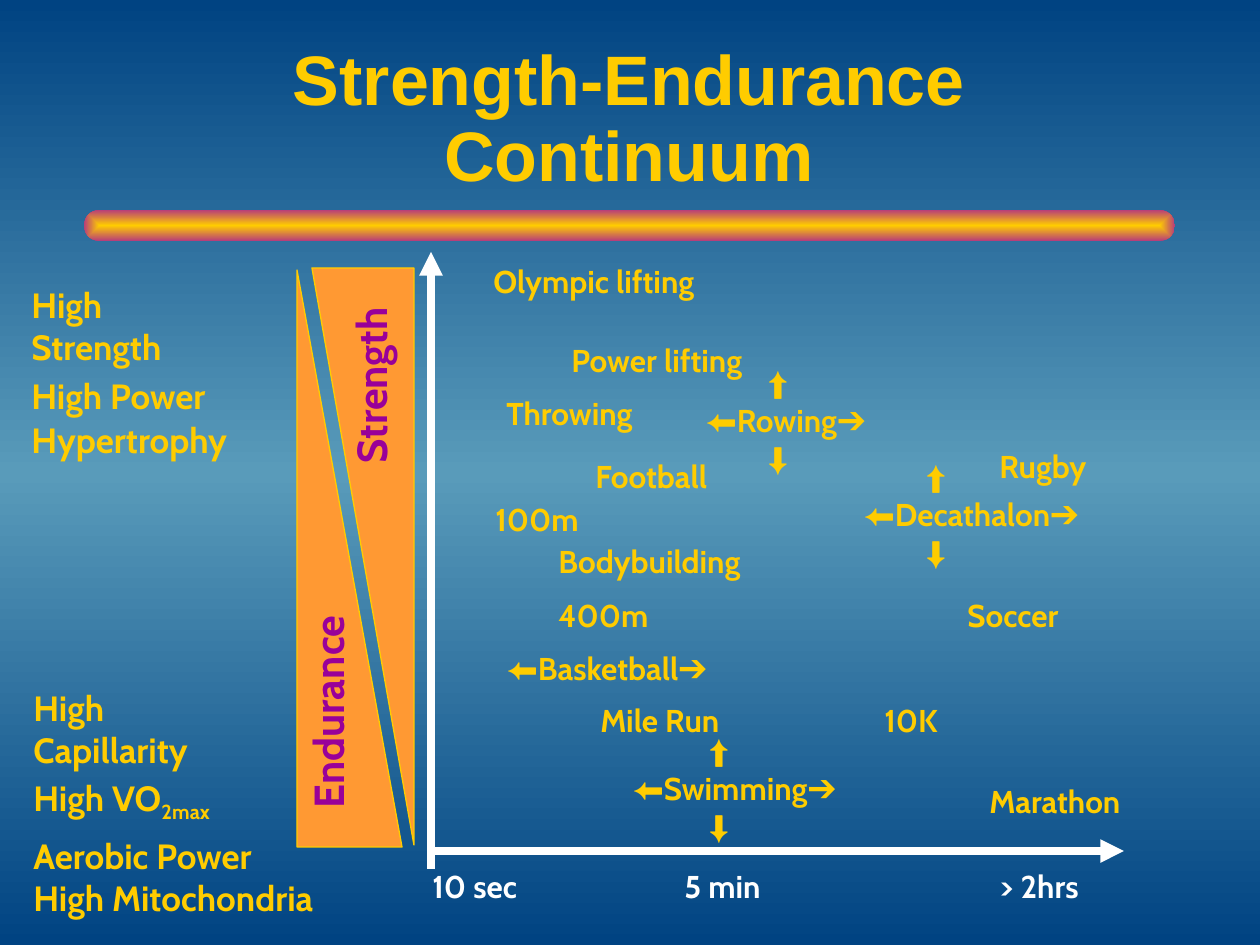
from dataclasses import dataclass

from lxml import etree
from pptx import Presentation
from pptx.dml.color import RGBColor
from pptx.enum.shapes import MSO_CONNECTOR, MSO_SHAPE
from pptx.enum.text import MSO_ANCHOR, MSO_AUTO_SIZE, PP_ALIGN
from pptx.oxml import parse_xml
from pptx.oxml.ns import nsdecls, qn
from pptx.util import Emu, Pt

STRAIGHT = MSO_CONNECTOR.STRAIGHT
ROUNDED, TRIANGLE = MSO_SHAPE.ROUNDED_RECTANGLE, MSO_SHAPE.RIGHT_TRIANGLE
MIDDLE, CENTER = MSO_ANCHOR.MIDDLE, PP_ALIGN.CENTER
FIT_SHAPE, NO_FIT = MSO_AUTO_SIZE.SHAPE_TO_FIT_TEXT, MSO_AUTO_SIZE.NONE


def px(n: int) -> Emu:
    return Emu(round(n * 914400 / 126))


@dataclass(frozen=True)
class Theme:
    gold: str = "FFCC00"
    orange: str = "FF9933"
    purple: str = "990099"
    white: str = "FFFFFF"
    rose: str = "B73D7A"
    navy: str = "004382"
    sky: str = "599BBA"
    title_font: str = "Arial"
    body_font: str = "Cabin"
    title: int = 40
    wedge: int = 24
    benefit: int = 20
    label: int = 18


T = Theme()


@dataclass(frozen=True)
class Label:
    x: int
    y: int
    w: int
    text: str
    h: int = 50
    size: int = T.label
    color: str = T.gold
    wrap: bool = False
    rotation: int = 0


@dataclass(frozen=True)
class RangeLabel:
    x: int
    y: int
    w: int
    name: str
    indent: int


@dataclass(frozen=True)
class Wedge:
    x: int
    y: int
    w: int
    h: int
    flipped: bool
    label: Label


WEDGES = [
    Wedge(297, 270, 105, 577, False,
          Label(204, 665, 248, "Endurance", 63, T.wedge, T.purple, rotation=270)),
    Wedge(312, 268, 102, 577, True,
          Label(266, 339, 210, "Strength", 63, T.wedge, T.purple, rotation=270)),
]
BENEFITS = [
    Label(x, y, w, text, h, T.benefit, wrap=True)
    for x, y, w, h, text in [
        (19, 277, 184, 140, "High\vStrength"),
        (19, 368, 265, 97, "High Power"),
        (19, 412, 273, 97, "Hypertrophy"),
        (21, 680, 221, 140, "High\vCapillarity"),
        (21, 770, 265, 97, "High VO"),
        (21, 828, 410, 140, "Aerobic Power\nHigh Mitochondria"),
    ]
]
SPORTS = [
    Label(481, 256, 256, "Olympic lifting"),
    Label(559, 335, 229, "Power lifting"),
    Label(494, 388, 175, "Throwing"),
    Label(583, 451, 154, "Football"),
    Label(483, 494, 116, "100m"),
    Label(546, 536, 233, "Bodybuilding"),
    Label(546, 590, 116, "400m"),
    Label(494, 643, 258, "⬅Basketball➔"),
    Label(588, 695, 164, "Mile Run"),
    Label(872, 695, 87, "10K"),
    Label(987, 441, 126, "Rugby"),
    Label(955, 590, 130, "Soccer"),
    Label(977, 776, 178, "Marathon"),
]
RANGES = [
    RangeLabel(693, 357, 213, "Rowing", 63),
    RangeLabel(851, 451, 272, "Decathalon", 63),
    RangeLabel(620, 725, 260, "Swimming", 77),
]
TIMES = [
    Label(x, 861, w, text, color=T.white)
    for x, w, text in [(420, 126, "10 sec"), (672, 115, "5 min"), (987, 130, "> 2hrs")]
]


def rgb(color: str) -> RGBColor:
    return RGBColor.from_string(color)


def set_gradient(fill, props, colors: list[str], direction: str) -> None:
    fill.gradient()
    stops = "".join(
        f'<a:gs pos="{i * 100000 // (len(colors) - 1)}"><a:srgbClr val="{c}"/></a:gs>'
        for i, c in enumerate(colors))
    grad = props.find(qn("a:gradFill"))
    props.replace(grad, parse_xml(
        f'<a:gradFill {nsdecls("a")} rotWithShape="1"><a:gsLst>{stops}</a:gsLst>'
        f'{direction}</a:gradFill>'))


def add_bar(s) -> None:
    bar = s.shapes.add_shape(ROUNDED, px(84), px(210), px(1091), px(31))
    bar.adjustments[0] = 0.5
    bar.shadow.inherit = False
    bar.line.fill.background()
    set_gradient(bar.fill, bar._element.spPr, [T.gold, T.rose],
                 '<a:path path="shape"><a:fillToRect l="50000" t="50000" '
                 'r="50000" b="50000"/></a:path>')


def add_label(s, label: Label):
    box = s.shapes.add_textbox(px(label.x), px(label.y), px(label.w), px(label.h))
    box.rotation = label.rotation
    tf = box.text_frame
    tf.word_wrap = label.wrap
    tf.auto_size = FIT_SHAPE
    tf.text = label.text
    for p in tf.paragraphs:
        p.font.name, p.font.size, p.font.bold = T.body_font, Pt(label.size), True
        p.font.color.rgb = rgb(label.color)
    return tf


def add_range(s, item: RangeLabel) -> None:
    tf = add_label(s, Label(item.x, item.y, item.w, f"⬆\n⬅{item.name}➔\n⬇", 127))
    for p in tf.paragraphs[::2]:
        p._p.get_or_add_pPr().set("marL", str(px(item.indent)))


def add_wedge(s, wedge: Wedge) -> None:
    sp = s.shapes.add_shape(TRIANGLE, px(wedge.x), px(wedge.y), px(wedge.w), px(wedge.h))
    sp.shadow.inherit = False
    sp.fill.solid()
    sp.fill.fore_color.rgb = rgb(T.orange)
    sp.line.color.rgb = rgb(T.gold)
    sp.line.width = Pt(0.75)
    if wedge.flipped:
        xfrm = sp._element.spPr.find(qn("a:xfrm"))
        xfrm.set("flipH", "1")
        xfrm.set("flipV", "1")


def add_axis(s, x1: int, y1: int, x2: int, y2: int) -> None:
    axis = s.shapes.add_connector(STRAIGHT, px(x1), px(y1), px(x2), px(y2))
    axis.line.color.rgb = rgb(T.white)
    axis.line.width = Pt(4.5)
    etree.SubElement(axis.line._get_or_add_ln(), qn("a:tailEnd"), type="triangle")
    etree.SubElement(axis._element.spPr, qn("a:effectLst"))


def set_title(s) -> None:
    title = s.shapes.title
    title.left, title.top, title.width, title.height = px(109), px(42), px(1040), px(158)
    tf = title.text_frame
    tf.text = "Strength-Endurance Continuum"
    tf.word_wrap, tf.auto_size, tf.vertical_anchor = True, NO_FIT, MIDDLE
    p = tf.paragraphs[0]
    p.alignment, p.line_spacing = CENTER, 0.9
    p.font.name, p.font.size, p.font.bold = T.title_font, Pt(T.title), True
    p.font.color.rgb = rgb(T.gold)


def main() -> None:
    prs = Presentation()
    prs.slide_width, prs.slide_height = px(1260), px(945)
    s = prs.slides.add_slide(prs.slide_layouts[5])
    fill = s.background.fill
    set_gradient(fill, s._element.cSld.bg.bgPr, [T.navy, T.sky, T.navy],
                 '<a:lin ang="5400000" scaled="0"/>')
    add_bar(s)
    set_title(s)
    for wedge in WEDGES:
        add_wedge(s, wedge)
    for wedge in WEDGES:
        add_label(s, wedge.label)
    add_axis(s, 431, 869, 431, 252)
    add_axis(s, 431, 851, 1124, 851)
    for label in BENEFITS + SPORTS + TIMES:
        tf = add_label(s, label)
        if label.text.endswith("VO"):
            r = tf.paragraphs[0].add_run()
            r.text = "2max"
            r.font._element.set("baseline", "-25000")
    for item in RANGES:
        add_range(s, item)
    prs.save("out.pptx")


if __name__ == "__main__":
    main()
